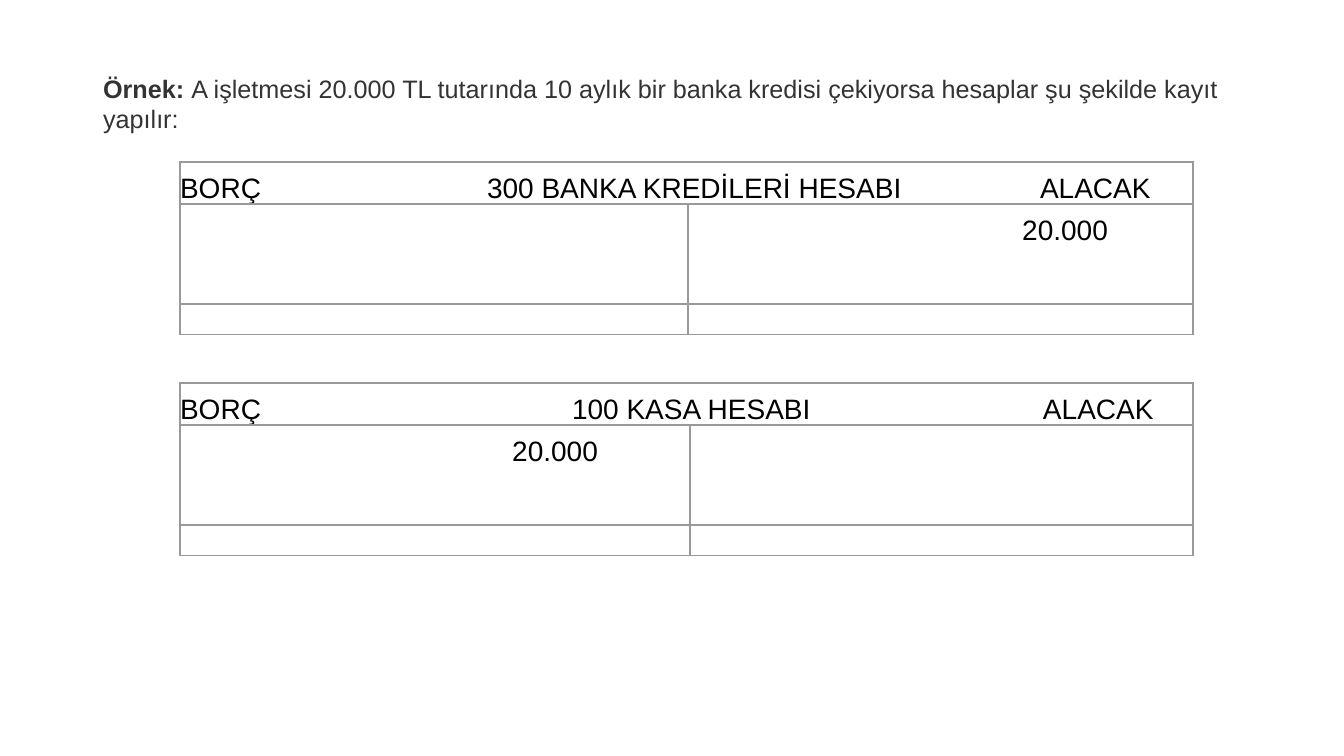
import pptx
import pptx.util
import pptx.dml.color
import pptx.enum.text
from dataclasses import dataclass
from lxml import etree
from pptx.oxml.ns import qn

INTRO = ("Örnek: ", "A işletmesi 20.000 TL tutarında 10 aylık bir banka kredisi "
         "çekiyorsa hesaplar şu şekilde kayıt yapılır:")

# amount_col: 0 is the debit side, 1 the credit side; lengths in px
ACCOUNTS = [
    dict(name="300 BANKA KREDİLERİ HESABI", amount="20.000", amount_col=1,
         top=162, cols=(508, 505), tabs=(307, 860), amount_inset=85),
    dict(name="100 KASA HESABI", amount="20.000", amount_col=0,
         top=383, cols=(510, 503), tabs=(392, 863), amount_inset=92),
]
TABLE_LEFT = 180
LINE = 21
ROWS = (2 * LINE, 100, LINE)


@dataclass(frozen=True)
class Theme:
    font: str = "Arial"
    intro: str = "333333"
    ink: str = "000000"
    border: str = "999999"
    intro_size: int = 18
    table_size: int = 20
    leading: int = 15
    border_width: int = 1


THEME = Theme()


def px(n):
    return pptx.util.Emu(round(n * 914400 / 100.8))


def style(r, size, color, bold=False):
    r.font.name = THEME.font
    r.font.size = pptx.util.Pt(size)
    r.font.bold = bold
    r.font.color.rgb = pptx.dml.color.RGBColor.from_string(color)


def add_borders(cell):
    """Insert the four edges ahead of the cell's fill, as the schema orders them."""
    tc_pr = cell._tc.get_or_add_tcPr()
    for i, edge in enumerate(("a:lnL", "a:lnR", "a:lnT", "a:lnB")):
        ln = etree.Element(qn(edge), w=str(pptx.util.Pt(THEME.border_width)))
        fill = etree.SubElement(ln, qn("a:solidFill"))
        etree.SubElement(fill, qn("a:srgbClr"), val=THEME.border)
        tc_pr.insert(i, ln)


def add_tabs(p, stops):
    tabs = etree.SubElement(p._p.get_or_add_pPr(), qn("a:tabLst"))
    for stop in stops:
        etree.SubElement(tabs, qn("a:tab"), pos=str(px(stop)), algn="l")


def write(cell, text):
    """Set text one line below the top of the cell."""
    cell.margin_top = px(LINE)
    p = cell.text_frame.paragraphs[0]
    p.text = text
    for r in p.runs:
        style(r, THEME.table_size, THEME.ink)
    return p


def add_account(s, account):
    table = s.shapes.add_table(
        len(ROWS), 2, px(TABLE_LEFT), px(account["top"]),
        px(sum(account["cols"])), px(sum(ROWS))).table
    table.first_row = table.horz_banding = False
    for col, width in zip(table.columns, account["cols"]):
        col.width = px(width)
    for row, height in zip(table.rows, ROWS):
        row.height = px(height)
    for cell in table.iter_cells():
        cell.margin_left = cell.margin_right = 0
        cell.margin_top = cell.margin_bottom = 0
        cell.fill.background()
        add_borders(cell)
        cell.text_frame.paragraphs[0].line_spacing = pptx.util.Pt(THEME.leading)

    header = table.cell(0, 0)
    header.merge(table.cell(0, 1))
    header.vertical_anchor = pptx.enum.text.MSO_ANCHOR.MIDDLE
    p = write(header, "\t".join(("BORÇ", account["name"], "ALACAK")))
    add_tabs(p, account["tabs"])

    amount = table.cell(1, account["amount_col"])
    amount.margin_right = px(account["amount_inset"])
    p = write(amount, account["amount"])
    p.alignment = pptx.enum.text.PP_ALIGN.RIGHT


def add_intro(s):
    title = s.shapes.title
    title.left, title.top, title.width, title.height = map(px, (93, 68, 1176, 72))
    tf = title.text_frame
    tf.word_wrap = True
    tf.auto_size = pptx.enum.text.MSO_AUTO_SIZE.NONE
    tf.vertical_anchor = pptx.enum.text.MSO_ANCHOR.TOP
    p = tf.paragraphs[0]
    p.alignment = pptx.enum.text.PP_ALIGN.LEFT
    for i, text in enumerate(INTRO):
        r = p.add_run()
        r.text = text
        style(r, THEME.intro_size, THEME.intro, bold=i == 0)


def main():
    prs = pptx.Presentation()
    prs.slide_width, prs.slide_height = px(1344), px(756)
    s = prs.slides.add_slide(prs.slide_layouts[5])
    add_intro(s)
    for account in ACCOUNTS:
        add_account(s, account)
    prs.save("out.pptx")


if __name__ == "__main__":
    main()
